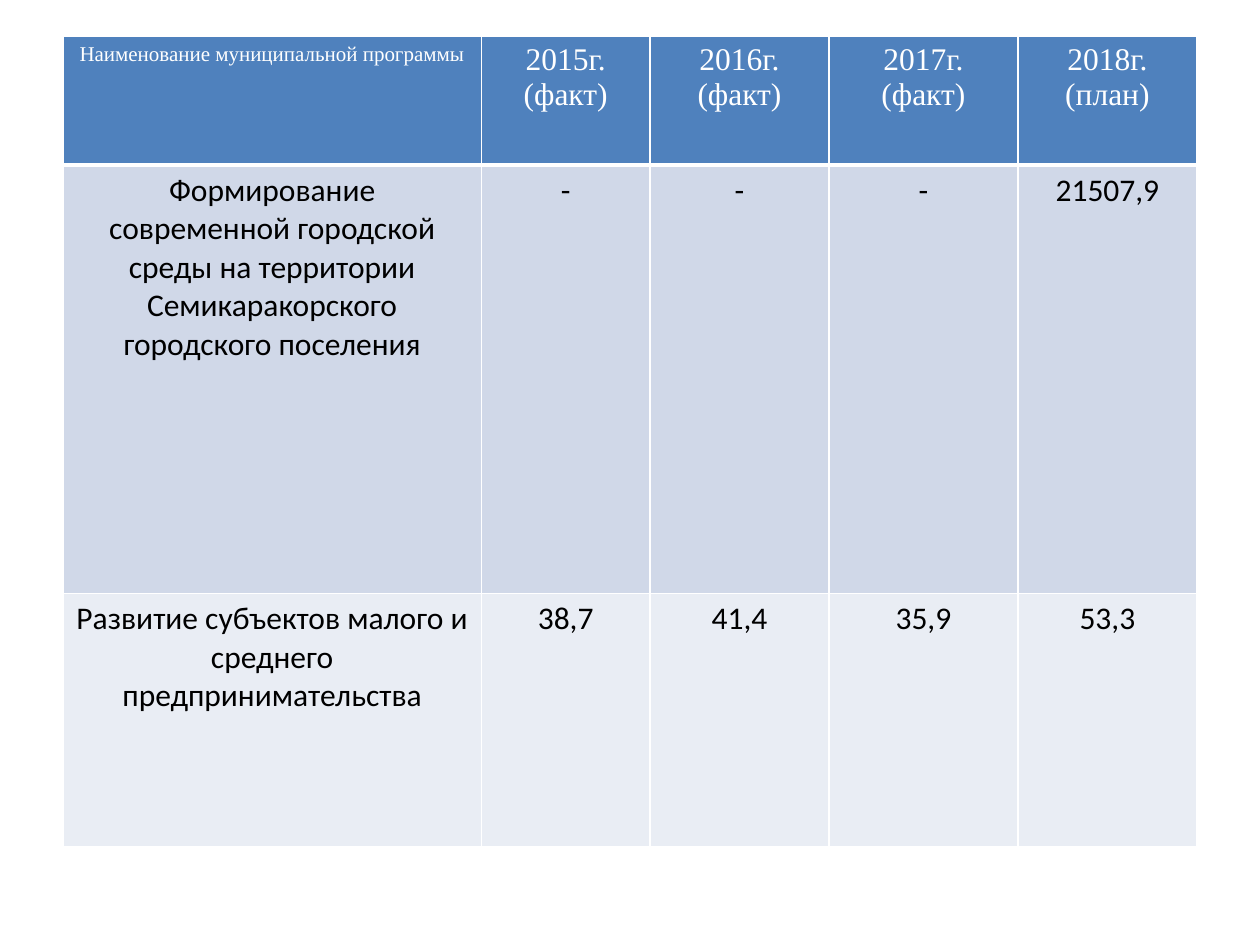
from lxml import etree
from pptx import Presentation
from pptx import util as u
from pptx.dml.color import RGBColor
from pptx.enum import text
from pptx.oxml.ns import qn

COLORS = {
    "header": "4F81BD",
    "band_dark": "D0D8E8",
    "band_light": "E9EDF4",
    "white": "FFFFFF",
    "black": "000000",
}
COLUMN_WIDTHS = [3.32, 1.34, 1.42, 1.5, 1.42]
ROW_HEIGHTS = [1.02, 3.4, 2.01]
ROW_FILLS = ["header", "band_dark", "band_light"]
PROGRAMMES = [
    ["Наименование муниципальной программы",
     "2015г. (факт)", "2016г. (факт)", "2017г. (факт)", "2018г. (план)"],
    ["Формирование современной городской среды на территории "
     "Семикаракорского городского поселения", "-", "-", "-", "21507,9"],
    ["Развитие субъектов малого и среднего предпринимательства",
     "38,7", "41,4", "35,9", "53,3"],
]


def set_border(cell, side, width):
    """Draw a white line of the given points on side L, R, T or B."""
    properties = cell._tc.get_or_add_tcPr()
    line = etree.SubElement(properties, qn(f"a:ln{side}"), w=str(u.Pt(width)))
    fill = etree.SubElement(line, qn("a:solidFill"))
    etree.SubElement(fill, qn("a:srgbClr"), val=COLORS["white"])


def write_text(cell, words, size, font_name, color):
    paragraph = cell.text_frame.paragraphs[0]
    paragraph.alignment = text.PP_ALIGN.CENTER
    run = paragraph.add_run()
    run.text = words
    run.font.size = u.Pt(size)
    run.font.name = font_name
    run.font.bold = False
    run.font.color.rgb = RGBColor.from_string(COLORS[color])


def format_cell(cell, row, column):
    is_header = row == 0
    for side in "LRTB":
        thick = (is_header and side == "B") or (row == 1 and side == "T")
        set_border(cell, side, 3 if thick else 1)
    cell.fill.solid()
    cell.fill.fore_color.rgb = RGBColor.from_string(COLORS[ROW_FILLS[row]])
    write_text(
        cell,
        PROGRAMMES[row][column],
        size=12 if is_header and column == 0 else 18,
        font_name="Times New Roman" if is_header else "Calibri",
        color="white" if is_header else "black",
    )


def add_programme_table(slide, left, top):
    table = slide.shapes.add_table(
        len(ROW_HEIGHTS), len(COLUMN_WIDTHS), u.Inches(left), u.Inches(top),
        u.Inches(sum(COLUMN_WIDTHS)), u.Inches(sum(ROW_HEIGHTS))).table
    for column, width in zip(table.columns, COLUMN_WIDTHS):
        column.width = u.Inches(width)
    for index, height in enumerate(ROW_HEIGHTS):
        table.rows[index].height = u.Inches(height)
        for column in range(len(COLUMN_WIDTHS)):
            format_cell(table.cell(index, column), index, column)


def main():
    presentation = Presentation()
    presentation.slide_width = u.Inches(10)
    presentation.slide_height = u.Inches(7.5)
    slide = presentation.slides.add_slide(presentation.slide_layouts[6])
    add_programme_table(slide, left=0.5, top=0.29)
    presentation.save("out.pptx")


if __name__ == "__main__":
    main()
